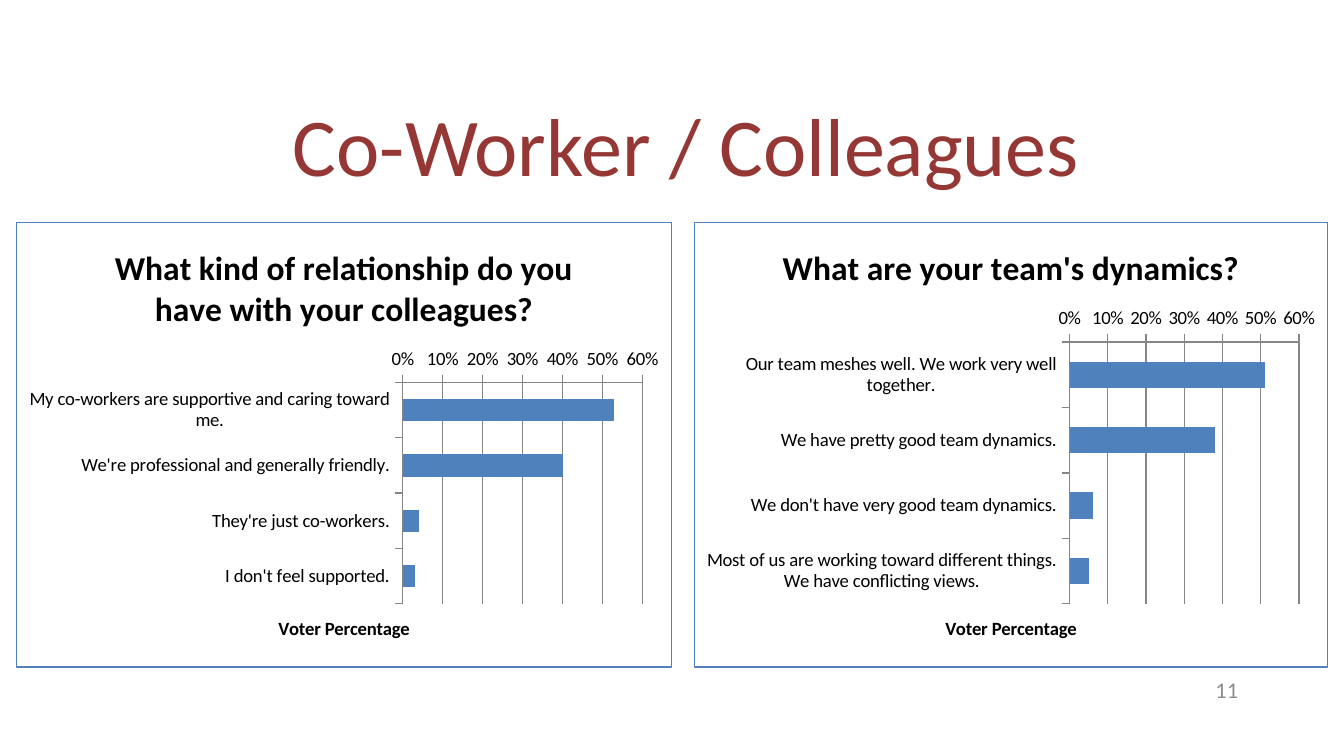
import lxml.etree
import pptx
import pptx.chart.data
import pptx.dml.color
import pptx.enum.chart
import pptx.enum.text
import pptx.oxml
import pptx.oxml.ns
import pptx.util
from pptx.util import Cm, Pt

# Content
TITLE = "Co-Worker / Colleagues"
PAGE_NUMBER = "11"
AXIS_TITLE = "Voter Percentage"
SURVEYS = [
    {
        "question": "What kind of relationship do you have with your colleagues?",
        "answers": [
            ("My co-workers are supportive and caring toward me.", 0.53),
            ("We're professional and generally friendly.", 0.40),
            ("They're just co-workers.", 0.04),
            ("I don't feel supported.", 0.03),
        ],
        "width": 12.4,
    },
    {
        "question": "What are your team's dynamics?",
        "answers": [
            ("Our team meshes well. We work very well together.", 0.51),
            ("We have pretty good team dynamics.", 0.38),
            ("We don't have very good team dynamics.", 0.06),
            ("Most of us are working toward different things. We have conflicting views.", 0.05),
        ],
        "width": 11.99,
    },
]

THEME = {
    "font": "Calibri",
    "title": "953735", "text": "000000", "bar": "4F81BD",
    "line": "868686", "number": "8C8C8C",
    "title_size": 44, "question_size": 18, "label_size": 10, "number_size": 12,
}

# Layout, in centimetres
CHART_LEFT, CHART_TOP, CHART_HEIGHT, CHART_GAP = 0.3, 4.19, 8.43, 0.41


def color(name):
    return pptx.dml.color.RGBColor.from_string(THEME[name])


def style_font(font, size, color_name, bold=False):
    font.name = THEME["font"]
    font.size = Pt(THEME[size])
    font.bold = bold
    font.color.rgb = color(color_name)


def add_text(slide, text, box, size, color_name, alignment, line_spacing=None):
    shape = slide.shapes.add_textbox(*(Cm(length) for length in box))
    text_frame = shape.text_frame
    text_frame.word_wrap = True
    text_frame.vertical_anchor = pptx.enum.text.MSO_ANCHOR.MIDDLE
    text_frame.text = text
    paragraph = text_frame.paragraphs[0]
    paragraph.alignment = alignment
    paragraph.line_spacing = line_spacing
    style_font(paragraph.runs[0].font, size, color_name)


def set_heading(owner, text, size):
    text_frame = (owner.chart_title if hasattr(owner, "chart_title") else owner.axis_title).text_frame
    text_frame.text = text
    style_font(text_frame.paragraphs[0].runs[0].font, size, "text", bold=True)


def add_chart_border(chart):
    border = pptx.oxml.parse_xml(
        f'<c:spPr {pptx.oxml.ns.nsdecls("c", "a")}><a:noFill/>'
        f'<a:ln w="{Pt(0.75)}"><a:solidFill><a:srgbClr val="{THEME["bar"]}"/>'
        "</a:solidFill></a:ln></c:spPr>"
    )
    chart.element.find(pptx.oxml.ns.qn("c:chart")).addnext(border)


def add_survey_chart(slide, survey, left):
    chart_data = pptx.chart.data.CategoryChartData(number_format="0%")
    chart_data.categories = [answer for answer, share in survey["answers"]]
    chart_data.add_series("Series 1", [share for answer, share in survey["answers"]])
    chart = slide.shapes.add_chart(
        pptx.enum.chart.XL_CHART_TYPE.BAR_CLUSTERED,
        Cm(left), Cm(CHART_TOP), Cm(survey["width"]), Cm(CHART_HEIGHT), chart_data,
    ).chart
    style_font(chart.font, "label_size", "text")
    chart.has_legend = False
    set_heading(chart, survey["question"], "question_size")
    add_chart_border(chart)

    # Bars
    plot = chart.plots[0]
    plot.gap_width = 150
    plot.vary_by_categories = False
    fill = plot.series[0].format.fill
    fill.solid()
    fill.fore_color.rgb = color("bar")

    # Axes
    chart.category_axis.reverse_order = True
    value_axis = chart.value_axis
    value_axis.minimum_scale, value_axis.maximum_scale = 0, 0.6
    value_axis.major_unit = 0.1
    value_axis.has_major_gridlines = True
    value_axis.tick_labels.number_format = "0%"
    value_axis.tick_labels.number_format_is_linked = False
    set_heading(value_axis, AXIS_TITLE, "label_size")
    for axis in (chart.category_axis, value_axis):
        axis.major_tick_mark = pptx.enum.chart.XL_TICK_MARK.OUTSIDE
    for part in (chart.category_axis, value_axis, value_axis.major_gridlines):
        part.format.line.color.rgb = color("line")
        part.format.line.width = Pt(0.75)


def main():
    presentation = pptx.Presentation()
    presentation.slide_width, presentation.slide_height = Cm(25.4), Cm(14.29)
    slide = presentation.slides.add_slide(presentation.slide_layouts[6])

    # Title
    add_text(slide, TITLE, (2.03, 1.45, 21.89, 2.77), "title_size", "title",
             pptx.enum.text.PP_ALIGN.CENTER, 0.9)

    # Charts side by side
    left = CHART_LEFT
    for survey in SURVEYS:
        add_survey_chart(slide, survey, left)
        left += survey["width"] + CHART_GAP

    # Page number
    add_text(slide, PAGE_NUMBER, (17.93, 12.65, 5.72, 0.76), "number_size", "number",
             pptx.enum.text.PP_ALIGN.RIGHT)

    presentation.save("out.pptx")


if __name__ == "__main__":
    main()
